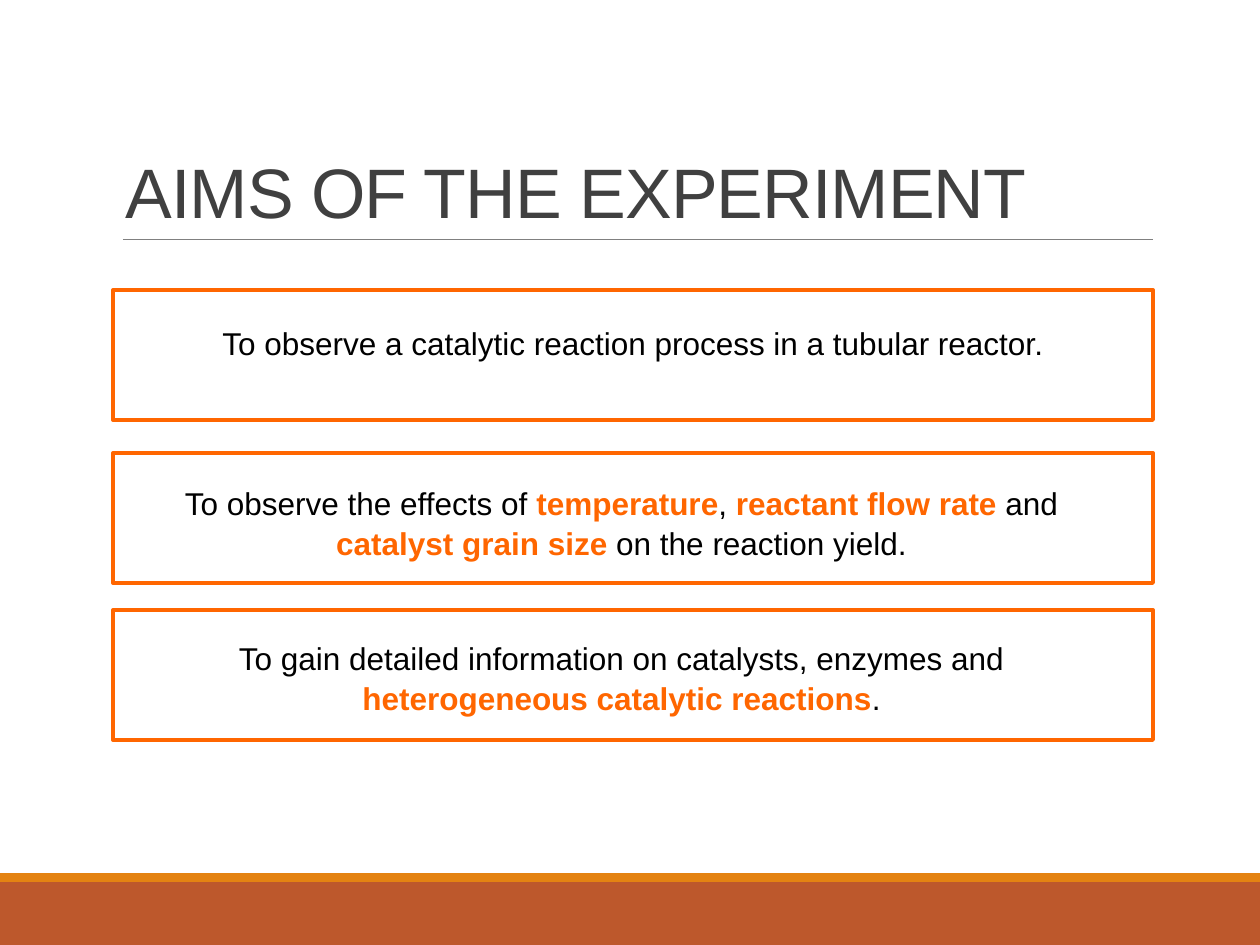
from dataclasses import dataclass

from pptx import Presentation, util as u
from pptx.dml.color import RGBColor
from pptx.enum import shapes, text
from pptx.oxml.ns import qn

PX = u.Inches(1) / 126


def px(*lengths):
    """Turn whole pixels into EMU."""
    return [round(length * PX) for length in lengths]


def apply(target, **values):
    for name, value in values.items():
        setattr(target, name, value)


@dataclass(frozen=True)
class Theme:
    font: str = "Arial"
    title_size: int = 40
    body_size: int = 18
    title: str = "404040"
    body: str = "000000"
    accent: str = "FF6600"
    rule: str = "808080"
    band: str = "BD582C"
    stripe: str = "E48312"


class AimsPage:
    def __init__(self, deck, theme):
        self.theme = theme
        self.page = deck.slides.add_slide(deck.slide_layouts[5])

    def add_span(self, para, words, size, color, bold=False):
        span = para.add_run()
        span.text = words
        apply(span.font, name=self.theme.font, size=u.Pt(size), bold=bold)
        span.font.color.rgb = RGBColor.from_string(color)
        return span

    def title(self, words, *place):
        box = self.page.shapes.title
        apply(box, **dict(zip(("left", "top", "width", "height"), px(*place))))
        apply(box.text_frame, vertical_anchor=text.MSO_ANCHOR.BOTTOM,
              auto_size=text.MSO_AUTO_SIZE.NONE, word_wrap=True)
        para = box.text_frame.paragraphs[0]
        apply(para, alignment=text.PP_ALIGN.LEFT, line_spacing=0.85)
        span = self.add_span(para, words, self.theme.title_size, self.theme.title)
        span.font._element.set("spc", "-50")

    def rectangle(self, place, fill=None, line=None):
        box = self.page.shapes.add_shape(shapes.MSO_SHAPE.RECTANGLE, *px(*place))
        box.shadow.inherit = False
        if fill:
            box.fill.solid()
            box.fill.fore_color.rgb = RGBColor.from_string(fill)
        else:
            box.fill.background()
        if line:
            box.line.color.rgb = RGBColor.from_string(line)
            box.line.width = u.Pt(2.25)
        else:
            box.line.fill.background()

    def rule(self, *ends):
        line = self.page.shapes.add_connector(shapes.MSO_CONNECTOR.STRAIGHT, *px(*ends))
        line.line.color.rgb = RGBColor.from_string(self.theme.rule)
        line.line.width = u.Pt(0.5)
        properties = line._element.spPr
        properties.append(properties.makeelement(qn("a:effectLst"), {}))

    def aim(self, place, pieces):
        """Add pieces in turn as plain and highlighted text."""
        box = self.page.shapes.add_textbox(*px(*place))
        box.text_frame.word_wrap = True
        para = box.text_frame.paragraphs[0]
        apply(para, alignment=text.PP_ALIGN.CENTER, line_spacing=1.05)
        for index, words in enumerate(pieces):
            strong = index % 2 == 1
            color = self.theme.accent if strong else self.theme.body
            self.add_span(para, words, self.theme.body_size, color, strong)


AIMS = [
    # frame top, text place, pieces
    (290, (113, 316, 1040, 89),
     ["To observe a catalytic reaction process in a tubular reactor."]),
    (453, (125, 476, 993, 127),
     ["To observe the effects of ", "temperature", ", ", "reactant flow rate ",
      "and ", "catalyst grain size", " on the reaction yield."]),
    (610, (113, 631, 1017, 127),
     ["To gain detailed information on catalysts, enzymes and ",
      "heterogeneous catalytic reactions", "."]),
]


def main():
    deck = Presentation()
    deck.slide_width, deck.slide_height = px(1260, 945)
    theme = Theme()
    page = AimsPage(deck, theme)
    page.rectangle((0, 882, 1260, 63), fill=theme.band)
    page.rectangle((0, 873, 1260, 9), fill=theme.stripe)
    page.rule(123, 239, 1153, 239)
    page.title("AIMS OF THE EXPERIMENT", 113, 39, 1040, 200)
    for frame_top, place, pieces in AIMS:
        page.aim(place, pieces)
        page.rectangle((113, frame_top, 1040, 130), line=theme.accent)
    deck.save("out.pptx")


if __name__ == "__main__":
    main()
